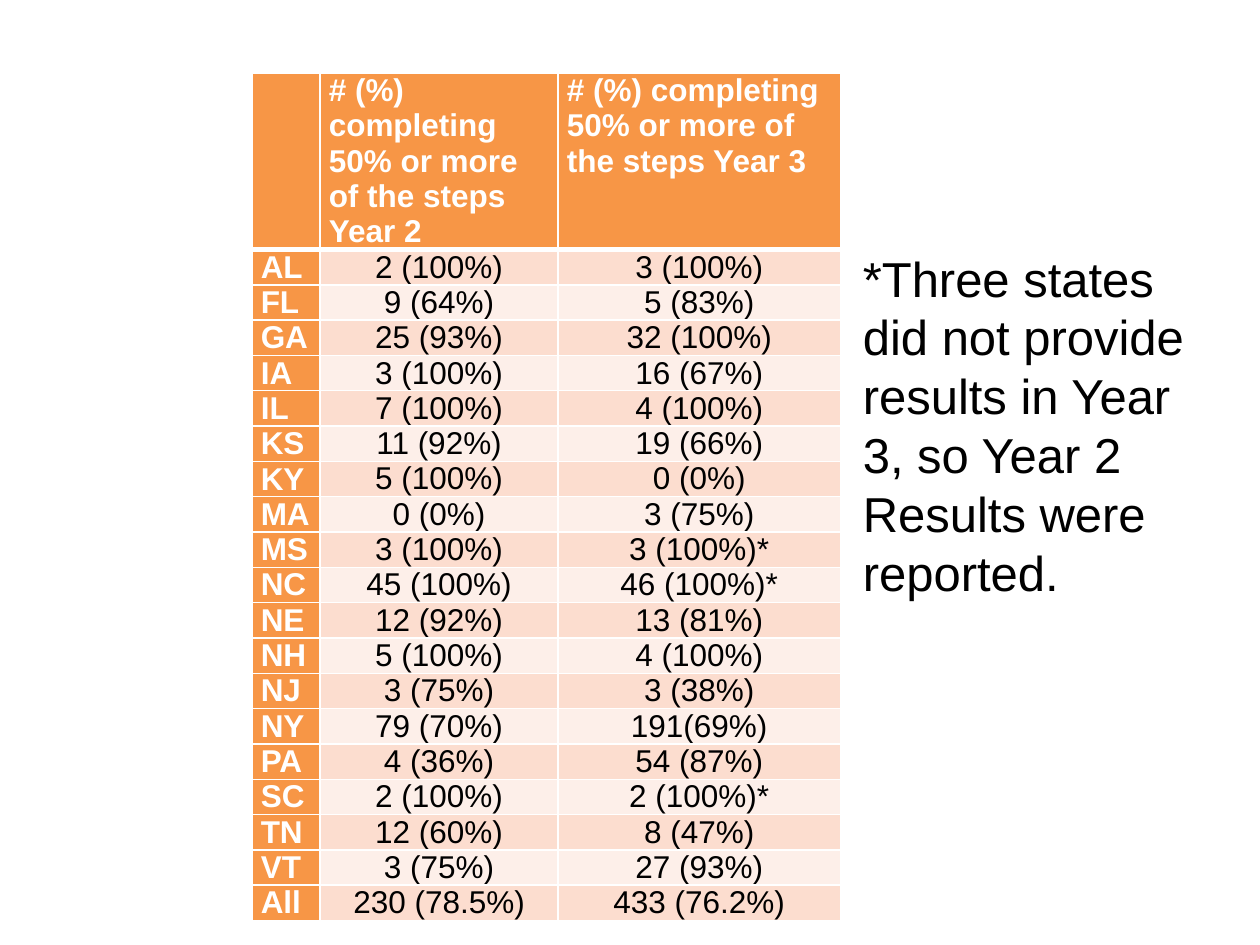
from lxml.etree import SubElement
from pptx import Presentation
from pptx.dml.color import RGBColor
from pptx.enum.text import MSO_ANCHOR, MSO_AUTO_SIZE, PP_ALIGN
from pptx.oxml.ns import qn
from pptx.util import Inches, Pt

ORANGE, PEACH, CREAM = "F79646", "FCDDCF", "FDEFE9"
WHITE, BLACK = "FFFFFF", "000000"

HEADINGS = ["", *(f"# (%) completing 50% or more of the steps Year {year}" for year in (2, 3))]
RESULTS = [
    ("AL", "2 (100%)", "3 (100%)"),
    ("FL", "9 (64%)", "5 (83%)"),
    ("GA", "25 (93%)", "32 (100%)"),
    ("IA", "3 (100%)", "16 (67%)"),
    ("IL", "7 (100%)", "4 (100%)"),
    ("KS", "11 (92%)", "19 (66%)"),
    ("KY", "5 (100%)", "0 (0%)"),
    ("MA", "0 (0%)", "3 (75%)"),
    ("MS", "3 (100%)", "3 (100%)*"),
    ("NC", "45 (100%)", "46 (100%)*"),
    ("NE", "12 (92%)", "13 (81%)"),
    ("NH", "5 (100%)", "4 (100%)"),
    ("NJ", "3 (75%)", "3 (38%)"),
    ("NY", "79 (70%)", "191(69%)"),
    ("PA", "4 (36%)", "54 (87%)"),
    ("SC", "2 (100%)", "2 (100%)*"),
    ("TN", "12 (60%)", "8 (47%)"),
    ("VT", "3 (75%)", "27 (93%)"),
    ("All", "230 (78.5%)", "433 (76.2%)"),
]


def color(value):
    return RGBColor.from_string(value)


class StateSlide:
    font_name = "Arial"

    def __init__(self, deck):
        self.width, self.height = deck.slide_width, deck.slide_height
        self.slide = deck.slides.add_slide(deck.slide_layouts[6])

    def place(self, left, top, width, height):
        return (round(left * self.width), round(top * self.height),
                round(width * self.width), round(height * self.height))

    def set_text(self, paragraph, text, size, ink, bold=False):
        paragraph.text = text
        font = paragraph.font
        font.name, font.size, font.bold = self.font_name, Pt(size), bold
        font.color.rgb = color(ink)

    def border(self, cell, **weights):
        properties = cell._tc.get_or_add_tcPr()
        for side in "LRTB":
            line = SubElement(properties, qn(f"a:ln{side}"), w=str(Pt(weights.get(side, 1))))
            SubElement(SubElement(line, qn("a:solidFill")), qn("a:srgbClr"), val=WHITE)

    def results_table(self, box, column_shares, header_share, row_share):
        rows = [HEADINGS, *RESULTS]
        frame = self.slide.shapes.add_table(len(rows), len(HEADINGS), *self.place(*box))
        table = frame.table
        for column, share in zip(table.columns, column_shares):
            column.width = round(share * self.width)
        for index, row in enumerate(table.rows):
            row.height = round((row_share if index else header_share) * self.height)
        frame.height = round(box[3] * self.height)
        for row_index, values in enumerate(rows):
            for column_index, value in enumerate(values):
                self.table_cell(table.cell(row_index, column_index), value, row_index, column_index)

    def table_cell(self, cell, value, row, column):
        heading = row == 0 or column == 0
        weights = {0: {"B": 3}, 1: {"T": 3}}.get(row, {})
        self.border(cell, **weights)
        cell.fill.solid()
        cell.fill.fore_color.rgb = color(ORANGE if heading else PEACH if row % 2 else CREAM)
        cell.margin_left = cell.margin_right = Inches(0.07)
        cell.margin_top = cell.margin_bottom = 0
        cell.vertical_anchor = MSO_ANCHOR.BOTTOM if row and not column else MSO_ANCHOR.TOP
        paragraph = cell.text_frame.paragraphs[0]
        paragraph.alignment = PP_ALIGN.LEFT if heading else PP_ALIGN.CENTER
        self.set_text(paragraph, value, 18, WHITE if heading else BLACK, heading)

    def note(self, text, box, size):
        frame = self.slide.shapes.add_textbox(*self.place(*box)).text_frame
        frame.word_wrap = True
        frame.auto_size = MSO_AUTO_SIZE.SHAPE_TO_FIT_TEXT
        self.set_text(frame.paragraphs[0], text, size, BLACK)


def main():
    deck = Presentation()
    deck.slide_width, deck.slide_height = Inches(10), Inches(7.5)
    page = StateSlide(deck)
    page.results_table((0.2, 0.58 / 7.5, 0.467, 0.88), (0.054, 0.189, 0.224),
                       0.35 / 7.5, 0.18 / 7.5)
    page.note("*Three states did not provide results in Year 3, so Year 2 Results were reported.",
              (0.675, 1.92 / 7.5, 0.3, 0.39), 28)
    deck.save("out.pptx")


if __name__ == "__main__":
    main()
